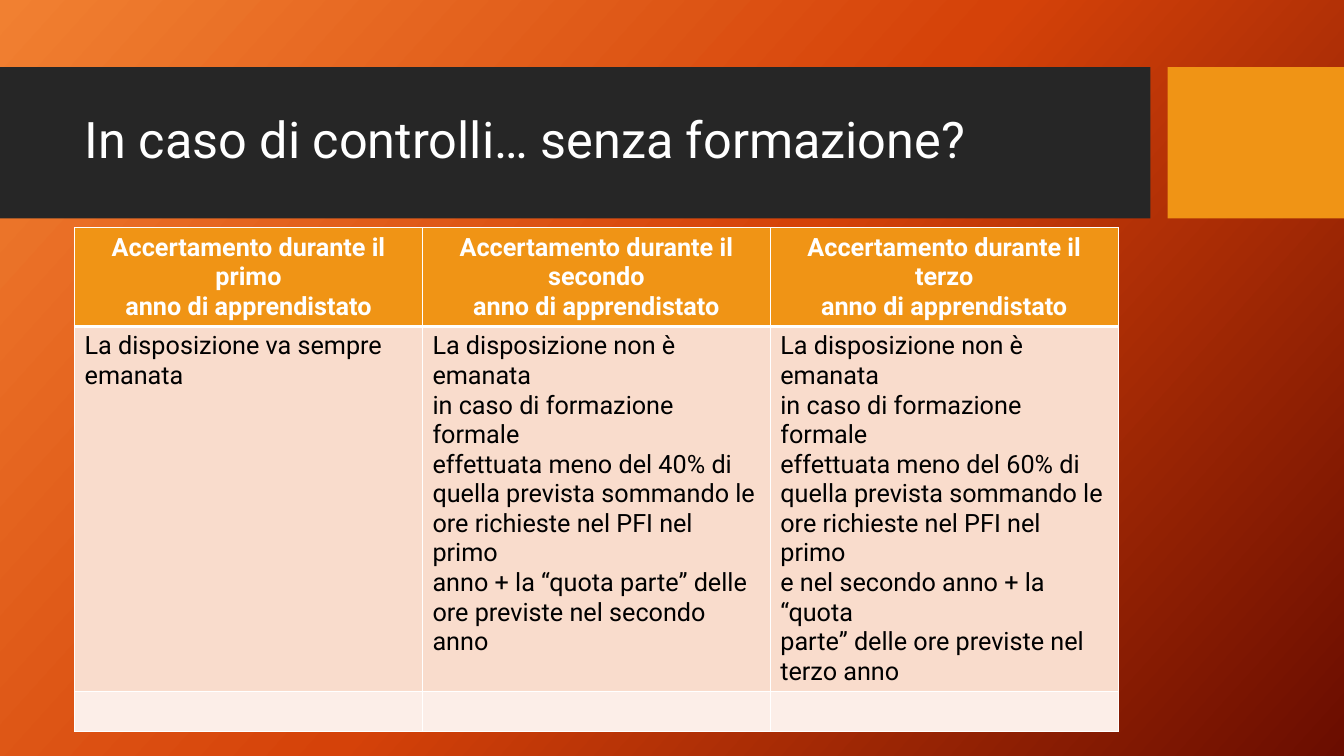
from copy import deepcopy

from lxml.etree import SubElement
from pptx import Presentation
from pptx.dml.color import RGBColor
from pptx.enum.shapes import MSO_SHAPE
from pptx.enum.text import MSO_ANCHOR, MSO_AUTO_SIZE, PP_ALIGN
from pptx.oxml.ns import qn
from pptx.util import Inches, Pt

WHITE = RGBColor(0xFF, 0xFF, 0xFF)
BLACK = RGBColor(0x00, 0x00, 0x00)
CHARCOAL = RGBColor(0x26, 0x26, 0x26)
AMBER = RGBColor(0xF0, 0x94, 0x15)
PEACH = RGBColor(0xF9, 0xDC, 0xCC)
PALE_PEACH = RGBColor(0xFC, 0xEE, 0xE8)
BACKGROUND = [(0, RGBColor(0xF1, 0x80, 0x31)),
              (0.5, RGBColor(0xD5, 0x42, 0x09)),
              (1, RGBColor(0x6A, 0x0D, 0x00))]

GRID_COLUMNS = 40
GRID_ROWS = 22.5

TITLE_FORMAT = {"name": "Roboto", "size": Pt(36), "bold": False}
HEADER_FORMAT = {"name": "Roboto", "size": Pt(18), "bold": True}
BODY_FORMAT = {"name": "Roboto", "size": Pt(18), "bold": False}

HEADERS = [
    ["Accertamento durante il primo", "anno di apprendistato"],
    ["Accertamento durante il", "secondo", "anno di apprendistato"],
    ["Accertamento durante il terzo", "anno di apprendistato"],
]
RULES = [
    ["La disposizione va sempre", "emanata"],
    ["La disposizione non è emanata", "in caso di formazione formale",
     "effettuata meno del 40% di", "quella prevista sommando le",
     "ore richieste nel PFI nel primo", "anno + la “quota parte” delle",
     "ore previste nel secondo anno"],
    ["La disposizione non è emanata", "in caso di formazione formale",
     "effettuata meno del 60% di", "quella prevista sommando le",
     "ore richieste nel PFI nel primo", "e nel secondo anno + la “quota",
     "parte” delle ore previste nel", "terzo anno"],
]
# Per row: grid height, cell texts, fill, font format, font colour, alignment, top and bottom border
TABLE_ROWS = [
    (2.85, HEADERS, AMBER, HEADER_FORMAT, WHITE, PP_ALIGN.CENTER, 1, 3),
    (10.53, RULES, PEACH, BODY_FORMAT, BLACK, PP_ALIGN.LEFT, 3, 1),
    (1.14, [[""]] * 3, PALE_PEACH, BODY_FORMAT, BLACK, PP_ALIGN.LEFT, 1, 1),
]


class SlideBuilder:
    """Places styled elements on one slide, measured in grid columns and rows."""

    def __init__(self, presentation):
        self.column = presentation.slide_width / GRID_COLUMNS
        self.row = presentation.slide_height / GRID_ROWS
        self.slide = presentation.slides.add_slide(presentation.slide_layouts[5])

    def box(self, left, top, width, height):
        """Turn grid units into slide lengths."""
        return (round(left * self.column), round(top * self.row),
                round(width * self.column), round(height * self.row))

    def gradient_background(self, stops, angle):
        fill = self.slide.background.fill
        fill.gradient()
        fill.gradient_angle = angle
        stop_list = self.slide.element.find(".//" + qn("a:gsLst"))
        while len(stop_list) < len(stops):
            stop_list.append(deepcopy(stop_list[0]))
        for stop, (position, color) in zip(fill.gradient_stops, stops):
            stop.position = position
            stop.color.rgb = color

    def rectangle(self, box, color):
        shape = self.slide.shapes.add_shape(MSO_SHAPE.RECTANGLE, *self.box(*box))
        shape.shadow.inherit = False
        shape.fill.solid()
        shape.fill.fore_color.rgb = color
        shape.line.fill.background()

    def fill_text(self, text_frame, lines, font_format, color, alignment):
        text_frame.text = "\n".join(lines)
        for paragraph in text_frame.paragraphs:
            paragraph.alignment = alignment
            for name, value in font_format.items():
                setattr(paragraph.font, name, value)
            paragraph.font.color.rgb = color

    def title(self, box, text):
        title = self.slide.shapes.title
        title.left, title.top, title.width, title.height = self.box(*box)
        frame = title.text_frame
        self.fill_text(frame, [text], TITLE_FORMAT, WHITE, PP_ALIGN.LEFT)
        frame.paragraphs[0].line_spacing = 0.9
        frame.vertical_anchor = MSO_ANCHOR.MIDDLE
        frame.auto_size = MSO_AUTO_SIZE.NONE
        frame.word_wrap = True
        # Bring the title in front of the bands
        title.element.getparent().append(title.element)

    def cell_borders(self, cell, top, bottom):
        properties = cell._tc.get_or_add_tcPr()
        for side, width in {"L": 1, "R": 1, "T": top, "B": bottom}.items():
            line = SubElement(properties, qn(f"a:ln{side}"), w=str(Pt(width)))
            fill = SubElement(line, qn("a:solidFill"))
            SubElement(fill, qn("a:srgbClr"), val=str(WHITE))

    def table(self, left, top, width, rows):
        height = sum(row[0] for row in rows)
        column_count = len(rows[0][1])
        table = self.slide.shapes.add_table(
            len(rows), column_count, *self.box(left, top, width, height)).table
        for table_row, row in zip(table.rows, rows):
            row_height, texts, color, font_format, font_color, alignment, upper, lower = row
            table_row.height = round(row_height * self.row)
            for cell, lines in zip(table_row.cells, texts):
                # Borders come before the fill in the cell properties
                self.cell_borders(cell, upper, lower)
                cell.fill.solid()
                cell.fill.fore_color.rgb = color
                self.fill_text(cell.text_frame, lines, font_format, font_color, alignment)


def main():
    presentation = Presentation()
    presentation.slide_width = Inches(13.33)
    presentation.slide_height = Inches(7.5)
    builder = SlideBuilder(presentation)
    builder.gradient_background(BACKGROUND, angle=360 - 42)
    builder.rectangle((0, 2, 34.24, 4.5), CHARCOAL)
    builder.rectangle((34.75, 2, 5.25, 4.5), AMBER)
    builder.title((2.22, 2.46, 31.54, 3.54), "In caso di controlli… senza formazione?")
    builder.table(2.22, 6.78, 31.06, TABLE_ROWS)
    presentation.save("out.pptx")


if __name__ == "__main__":
    main()
